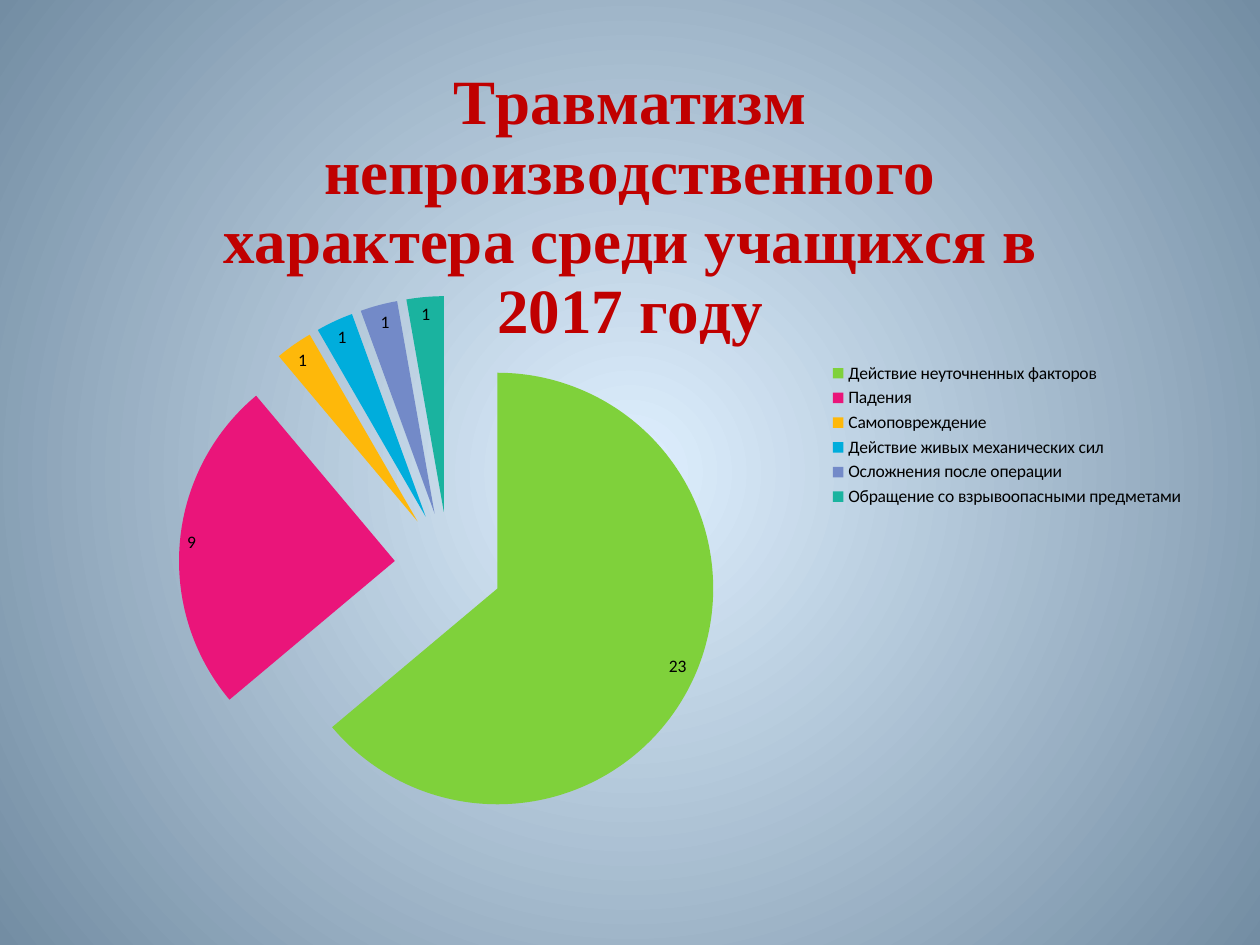
from dataclasses import dataclass

from lxml import etree
from pptx import Presentation
from pptx.chart.data import CategoryChartData
from pptx.dml.color import RGBColor
from pptx.enum.chart import XL_CHART_TYPE, XL_LABEL_POSITION, XL_LEGEND_POSITION
from pptx.oxml.ns import qn
from pptx.util import Cm, Pt

PIE = XL_CHART_TYPE.PIE
INSIDE_END = XL_LABEL_POSITION.INSIDE_END
LEGEND_RIGHT = XL_LEGEND_POSITION.RIGHT


@dataclass(frozen=True)
class Theme:
    title_color: str = "C00000"
    text_color: str = "000000"
    background_center: str = "DFF0FF"
    background_edge: str = "738DA3"
    title_font: str = "Times New Roman"
    body_font: str = "Calibri"
    title_size: int = 36
    body_size: int = 10


THEME = Theme()
TITLE = "Травматизм непроизводственного характера среди учащихся в 2017 году"
INJURIES = [
    ("Действие неуточненных факторов", 23, "7FD13B"),
    ("Падения", 9, "EA157A"),
    ("Самоповреждение", 1, "FEB80A"),
    ("Действие живых механических сил", 1, "00ADDC"),
    ("Осложнения после операции", 1, "738AC8"),
    ("Обращение со взрывоопасными предметами", 1, "1AB39F"),
]
PLOT_LAYOUT = {"x": 0.03, "y": 0.33, "w": 0.62, "h": 0.66}
EXPLOSION = 25


def format_font(font, *, name, size, color, bold=False):
    font.name = name
    font.size = Pt(size)
    font.bold = bold
    font.color.rgb = RGBColor.from_string(color)


def write_text(text_frame, text, **text_format):
    run = text_frame.paragraphs[0].add_run()
    run.text = text
    format_font(run.font, **text_format)


def paint_background(slide):
    fill = slide.background.fill
    fill.gradient()
    colors = (THEME.background_center, THEME.background_edge)
    for stop, position, color in zip(fill.gradient_stops, (0, 1), colors):
        stop.position = position
        stop.color.rgb = RGBColor.from_string(color)
    gradient = next(slide.element.iter(qn("a:gradFill")))
    for linear in gradient.findall(qn("a:lin")):
        gradient.remove(linear)
    radial = etree.SubElement(gradient, qn("a:path"), path="circle")
    etree.SubElement(
        radial, qn("a:fillToRect"), {side: "50000" for side in "ltrb"}
    )


def place_plot(chart, layout):
    plot_area = next(chart.element.iter(qn("c:plotArea")))
    for automatic in plot_area.findall(qn("c:layout")):
        plot_area.remove(automatic)
    container = etree.Element(qn("c:layout"))
    plot_area.insert(0, container)
    manual = etree.SubElement(container, qn("c:manualLayout"))
    settings = {"layoutTarget": "inner", "xMode": "edge", "yMode": "edge", **layout}
    for tag, value in settings.items():
        etree.SubElement(manual, qn(f"c:{tag}"), val=str(value))


def explode_slices(chart, distance):
    series_name = next(chart.element.iter(qn("c:ser"))).find(qn("c:tx"))
    explosion = etree.Element(qn("c:explosion"), val=str(distance))
    series_name.addnext(explosion)


def add_injury_chart(slide, left, top, width, height):
    chart_data = CategoryChartData()
    chart_data.categories = [name for name, _, _ in INJURIES]
    chart_data.add_series("Series 1", [count for _, count, _ in INJURIES])
    chart = slide.shapes.add_chart(PIE, left, top, width, height, chart_data).chart
    body_format = {
        "name": THEME.body_font, "size": THEME.body_size, "color": THEME.text_color,
    }
    format_font(chart.font, **body_format)

    chart.has_title = True
    chart.chart_title.include_in_layout = False
    write_text(
        chart.chart_title.text_frame, TITLE, name=THEME.title_font,
        size=THEME.title_size, color=THEME.title_color, bold=True,
    )

    chart.has_legend = True
    chart.legend.position = LEGEND_RIGHT
    chart.legend.include_in_layout = False
    format_font(chart.legend.font, **body_format)

    plot = chart.plots[0]
    plot.vary_by_categories = True
    plot.has_data_labels = True
    plot.data_labels.show_value = True
    plot.data_labels.position = INSIDE_END
    format_font(plot.data_labels.font, **body_format)

    explode_slices(chart, EXPLOSION)
    for index, (_, _, color) in enumerate(INJURIES):
        point_format = plot.series[0].points[index].format
        point_format.fill.solid()
        point_format.fill.fore_color.rgb = RGBColor.from_string(color)
        point_format.line.fill.background()
    place_plot(chart, PLOT_LAYOUT)


def main():
    presentation = Presentation()
    presentation.slide_width = Cm(25.4)
    presentation.slide_height = Cm(19.05)
    slide = presentation.slides.add_slide(presentation.slide_layouts[6])
    paint_background(slide)
    add_injury_chart(slide, Cm(1.27), Cm(0.53), Cm(22.86), Cm(16.48))
    presentation.save("out.pptx")


if __name__ == "__main__":
    main()
